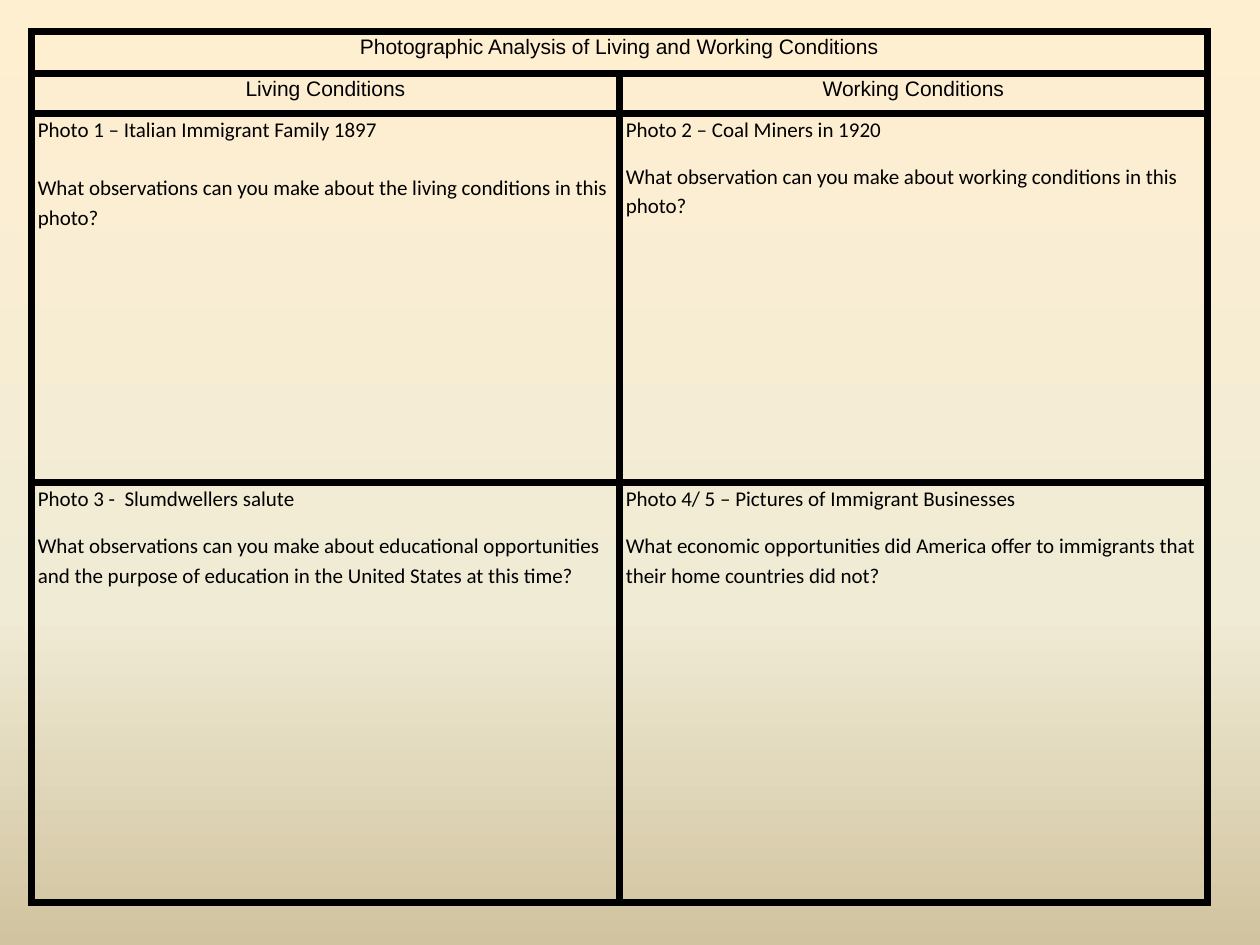
import copy

import pptx
import pptx.dml.color
import pptx.enum.text
import pptx.oxml
import pptx.oxml.ns
import pptx.util

Pt = pptx.util.Pt
RGB = pptx.dml.color.RGBColor.from_string
ALIGN = pptx.enum.text.PP_ALIGN

COLORS = {"ink": "000000", "cream": "FFEFD1", "ivory": "F0EBD5", "sand": "D1C39F"}
BORDER = 4.5
COLUMNS = [336, 336]
ROWS = [24, 22.8, 211.2, 240]

TITLE = "Photographic Analysis of Living and Working Conditions"
HEADINGS = ["Living Conditions", "Working Conditions"]
# Each prompt: photo caption, question, space after the caption
PROMPTS = [
    [("Photo 1 – Italian Immigrant Family 1897",
      "What observations can you make about the living conditions in this photo?", 16.8),
     ("Photo 2 – Coal Miners in 1920",
      "What observation can you make about working conditions in this photo?", 10)],
    [("Photo 3 -  Slumdwellers salute",
      "What observations can you make about educational opportunities and the purpose "
      "of education in the United States at this time?", 10),
     ("Photo 4/ 5 – Pictures of Immigrant Businesses",
      "What economic opportunities did America offer to immigrants that their home "
      "countries did not?", 10)],
]


def set_background(s):
    fill = s.background.fill
    fill.gradient()
    fill.gradient_angle = 270
    stops = s.element.find(".//" + pptx.oxml.ns.qn("a:gsLst"))
    stops.insert(1, copy.deepcopy(stops[0]))
    shades = [(0, "cream"), (0.65, "ivory"), (1, "sand")]
    for stop, (position, name) in zip(fill.gradient_stops, shades):
        stop.position = position
        stop.color.rgb = RGB(COLORS[name])


def style_cell(cell):
    """Clear the fill, set the margins and draw the four borders."""
    cell.fill.background()
    cell.margin_left = cell.margin_right = Pt(3.6)
    cell.margin_top = cell.margin_bottom = Pt(0)
    props = cell._tc.get_or_add_tcPr()
    for i, side in enumerate("LRTB"):
        props.insert(i, pptx.oxml.parse_xml(
            f'<a:ln{side} {pptx.oxml.ns.nsdecls("a")} w="{Pt(BORDER)}"><a:solidFill>'
            f'<a:srgbClr val="{COLORS["ink"]}"/></a:solidFill></a:ln{side}>'))


def write_cell(cell, lines, font, align, gap=0):
    """Write one paragraph per line, with the gap between paragraphs."""
    tf = cell.text_frame
    tf.text = "\n".join(lines)
    for p in tf.paragraphs:
        p.alignment = align
        p.line_spacing = 1.15
        p.space_after = Pt(gap)
        for r in p.runs:
            r.font.name = font
            r.font.size = Pt(12)
            r.font.color.rgb = RGB(COLORS["ink"])


def add_worksheet(s, left, top):
    frame = s.shapes.add_table(len(ROWS), len(COLUMNS), Pt(left), Pt(top),
                               Pt(sum(COLUMNS)), Pt(sum(ROWS)))
    table = frame.table
    table.first_row = table.horz_banding = False
    for column, width in zip(table.columns, COLUMNS):
        column.width = Pt(width)
    for row, height in zip(table.rows, ROWS):
        row.height = Pt(height)
    for cell in table.iter_cells():
        style_cell(cell)

    table.cell(0, 0).merge(table.cell(0, 1))
    write_cell(table.cell(0, 0), [TITLE], "Arial", ALIGN.CENTER)
    for col, heading in enumerate(HEADINGS):
        write_cell(table.cell(1, col), [heading], "Arial", ALIGN.CENTER)
    for row, prompts in enumerate(PROMPTS, start=2):
        for col, (caption, question, gap) in enumerate(prompts):
            write_cell(table.cell(row, col), [caption, question], "Calibri", ALIGN.LEFT, gap)


def main():
    prs = pptx.Presentation()
    prs.slide_width, prs.slide_height = Pt(720), Pt(540)
    s = prs.slides.add_slide(prs.slide_layouts[6])
    set_background(s)
    add_worksheet(s, 18, 18)
    prs.save("out.pptx")


if __name__ == "__main__":
    main()
